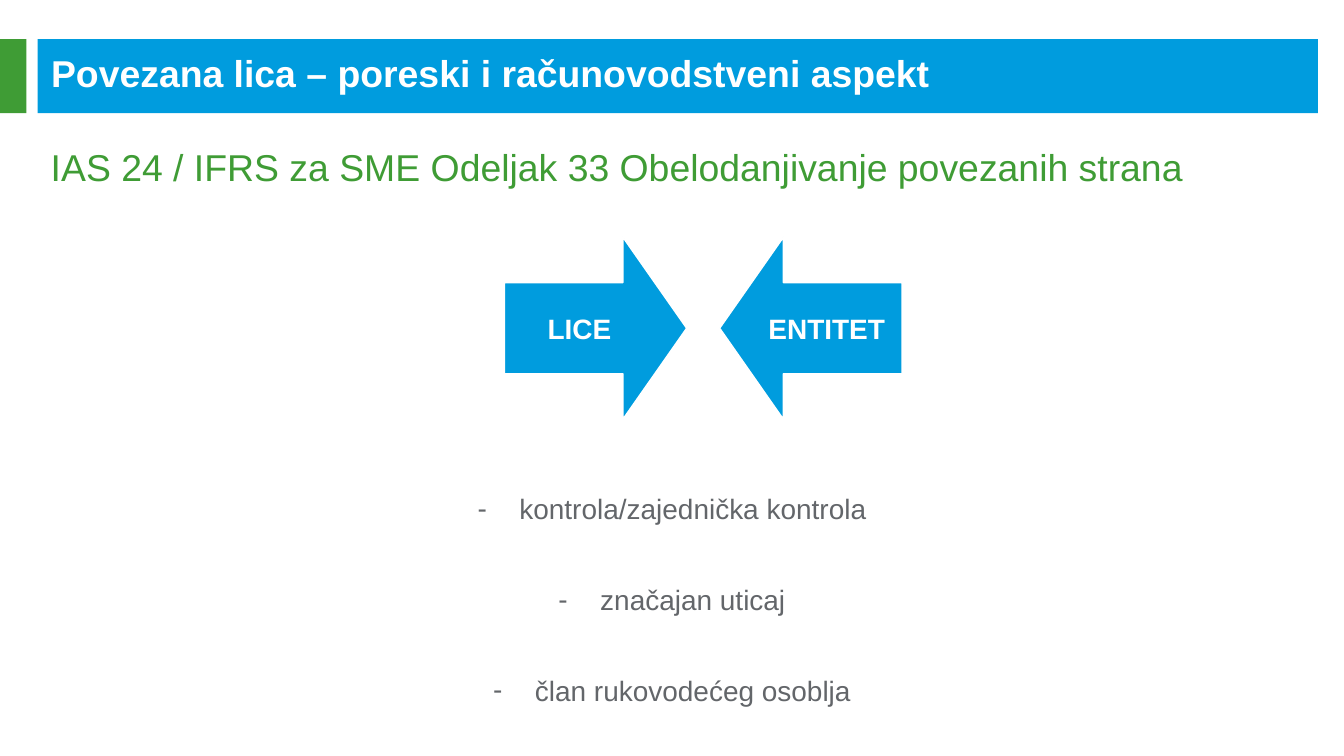
from dataclasses import dataclass

from lxml.etree import SubElement
from pptx import Presentation
from pptx.dml.color import RGBColor
from pptx.enum.shapes import MSO_SHAPE
from pptx.enum.text import MSO_ANCHOR, MSO_AUTO_SIZE, PP_ALIGN
from pptx.oxml.ns import qn
from pptx.util import Cm, Pt

TITLE = "Povezana lica – poreski i računovodstveni aspekt"
SUBTITLE = "IAS 24 / IFRS za SME Odeljak 33 Obelodanjivanje povezanih strana"
ARROWS = [("LICE", MSO_SHAPE.RIGHT_ARROW), ("ENTITET", MSO_SHAPE.LEFT_ARROW)]
RELATIONS = [
    "kontrola/zajednička kontrola",
    "značajan uticaj",
    "član rukovodećeg osoblja",
]


@dataclass(frozen=True)
class Theme:
    font: str = "Arial"
    blue: RGBColor = RGBColor(0x00, 0x9C, 0xDE)
    green: RGBColor = RGBColor(0x3F, 0x9C, 0x35)
    grey: RGBColor = RGBColor(0x63, 0x66, 0x6A)
    white: RGBColor = RGBColor(0xFF, 0xFF, 0xFF)
    heading: int = 20
    body: int = 15


THEME = Theme()
WIDTH, HEIGHT = 25.4, 14.29
MARGIN = 0.71
BAR_TOP, BAR_HEIGHT = 0.74, 1.4
ARROW_LEFT, ARROW_TOP, ARROW_SIZE, ARROW_GAP = 9.53, 4.48, 3.45, 0.62


def place(sp, left, top, width, height):
    sp.left, sp.top, sp.width, sp.height = map(Cm, (left, top, width, height))


def add_block(s, kind, left, top, width, height, color):
    sp = s.shapes.add_shape(kind, *map(Cm, (left, top, width, height)))
    sp.shadow.inherit = False
    sp.fill.solid()
    sp.fill.fore_color.rgb = color
    sp.line.fill.background()
    return sp


def write(sp, lines, size, color, bold=False, align=PP_ALIGN.LEFT, anchor=MSO_ANCHOR.TOP):
    tf = sp.text_frame
    tf.text = "\n".join(lines)
    tf.word_wrap = True
    tf.auto_size = MSO_AUTO_SIZE.NONE
    tf.vertical_anchor = anchor
    for p in tf.paragraphs:
        p.alignment = align
        p.space_before = Pt(0)
        for r in p.runs:
            r.font.name = THEME.font
            r.font.size = Pt(size)
            r.font.bold = bold
            r.font.color.rgb = color
    return tf


def add_dash(p):
    pPr = p._p.get_or_add_pPr()
    pPr.set("marL", str(Cm(0.79)))
    pPr.set("indent", str(Cm(-0.79)))
    SubElement(pPr, qn("a:buFont"), typeface=THEME.font)
    SubElement(pPr, qn("a:buChar"), char="-")


def main():
    prs = Presentation()
    prs.slide_width, prs.slide_height = Cm(WIDTH), Cm(HEIGHT)
    s = prs.slides.add_slide(prs.slide_layouts[1])
    title, body = s.placeholders

    bar = add_block(s, MSO_SHAPE.RECTANGLE, MARGIN, BAR_TOP, 24.2, BAR_HEIGHT, THEME.blue)
    add_block(s, MSO_SHAPE.RECTANGLE, 0, BAR_TOP, 0.5, BAR_HEIGHT, THEME.green)
    title._element.addprevious(bar._element)

    place(title, MARGIN, 0.99, 24, 0.76)
    write(title, [TITLE], THEME.heading, THEME.white, bold=True, anchor=MSO_ANCHOR.MIDDLE)

    subtitle = s.shapes.add_textbox(Cm(MARGIN), Cm(2.6), Cm(24.2), Cm(1.35))
    write(subtitle, [SUBTITLE], THEME.heading, THEME.green)

    for i, (label, kind) in enumerate(ARROWS):
        left = ARROW_LEFT + i * (ARROW_SIZE + ARROW_GAP)
        arrow = add_block(s, kind, left, ARROW_TOP, ARROW_SIZE, ARROW_SIZE, THEME.blue)
        arrow.adjustments[0] = 0.5
        arrow.adjustments[1] = 0.35
        arrow.line.color.rgb = THEME.white
        arrow.line.width = Pt(0.85)
        tf = write(arrow, [label], THEME.body, THEME.white, bold=True,
                   align=PP_ALIGN.CENTER, anchor=MSO_ANCHOR.MIDDLE)
        tf.margin_left = tf.margin_right = Cm(0.25)

    place(body, 0, 9.17, WIDTH, 4.32)
    tf = write(body, RELATIONS, THEME.body, THEME.grey, align=PP_ALIGN.CENTER)
    for p in tf.paragraphs:
        add_dash(p)
        p.space_after = Pt(30.7)

    prs.save("out.pptx")


if __name__ == "__main__":
    main()
